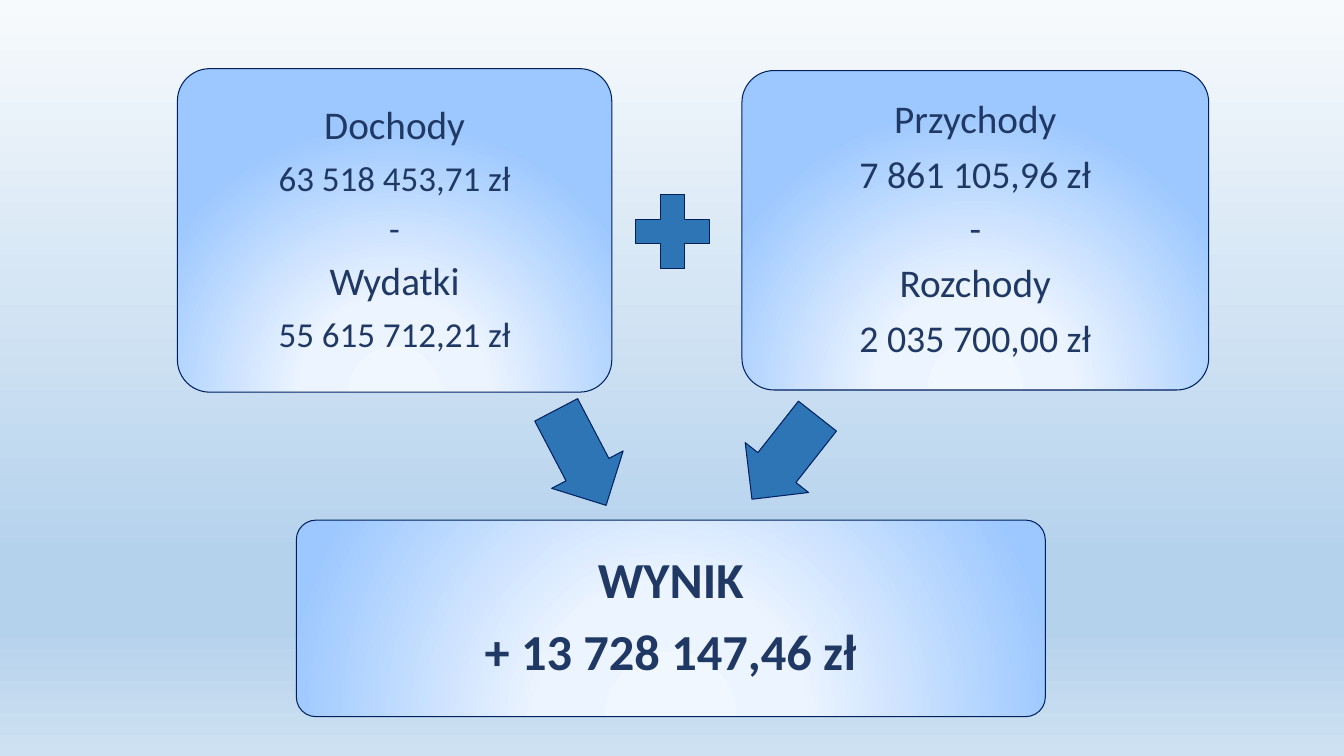
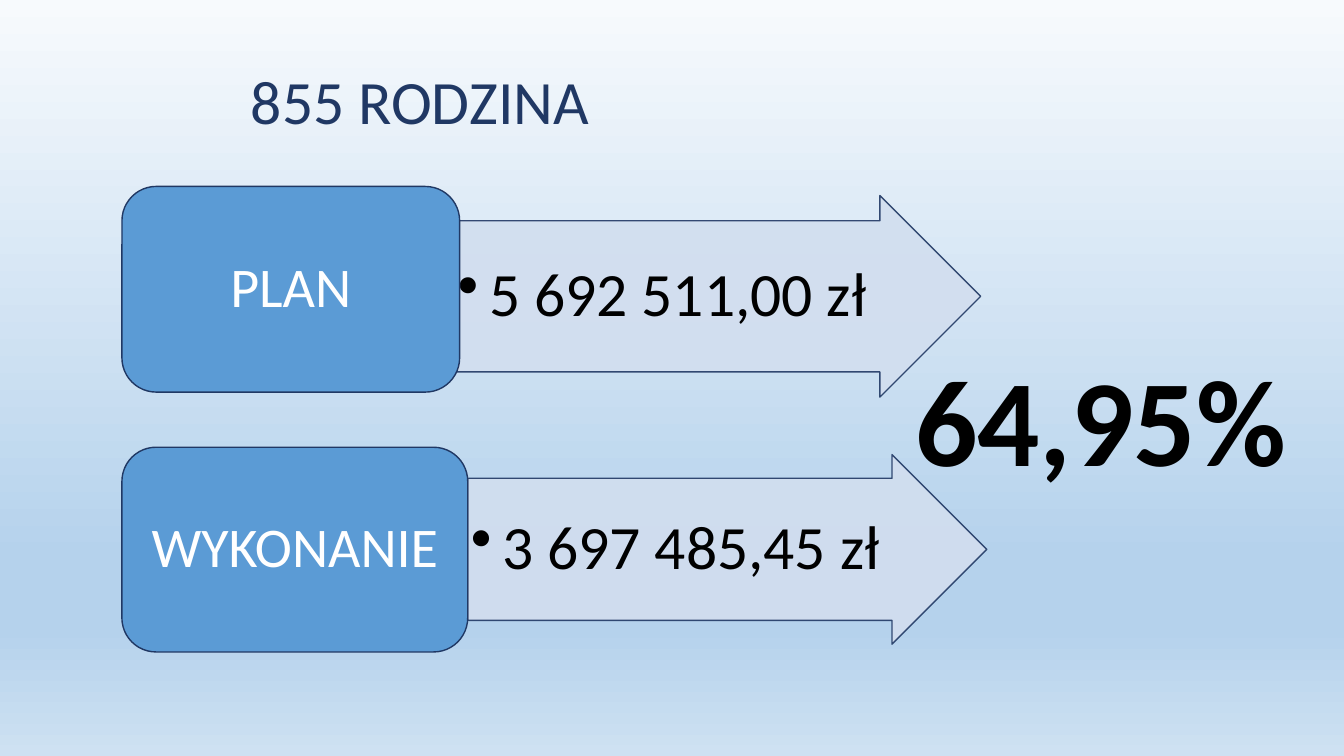
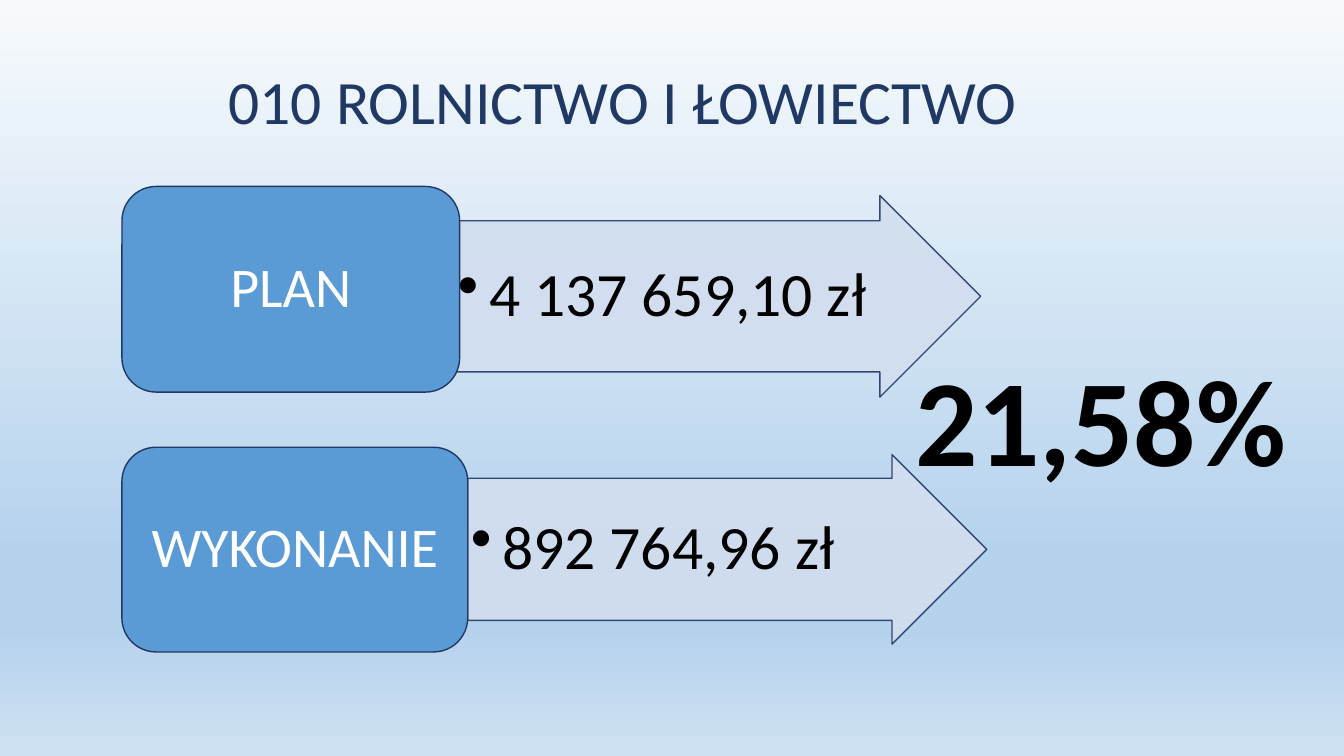
from dataclasses import dataclass

from lxml.etree import SubElement
from pptx import Presentation
from pptx.dml.color import RGBColor
from pptx.enum.shapes import MSO_SHAPE
from pptx.enum.text import MSO_ANCHOR, PP_ALIGN
from pptx.oxml.ns import qn
from pptx.util import Pt


@dataclass(frozen=True)
class Theme:
    font: str = "Calibri"
    navy: str = "203864"
    outline: str = "002060"
    accent: str = "2E75B6"
    label_fill: str = "5B9BD5"
    arrow_fill: str = "D2DEEF"
    white: str = "FFFFFF"
    black: str = "000000"
    sky: tuple = ((0, "F7FAFD"), (74, "B5D2EC"), (83, "B5D2EC"), (100, "CEE1F2"))
    glow: tuple = ((0, "F1F7FF"), (34, "ECF4FF"), (100, "9DC8FF"))
    heading: int = 28
    result: int = 36
    label: int = 40
    title: int = 44
    percent: int = 88


theme = Theme()


def set_gradient(fill, element, stops):
    """Give the fill these stops and return its gradient element."""
    fill.gradient()
    gradient = next(element.iter(qn("a:gradFill")))
    stop_list = gradient.find(qn("a:gsLst"))
    for stop in list(stop_list):
        stop_list.remove(stop)
    for position, color in stops:
        stop = SubElement(stop_list, qn("a:gs"), pos=str(position * 1000))
        SubElement(stop, qn("a:srgbClr"), val=color)
    return gradient


def place(slide, kind, frame, lines=(), color=theme.navy, bold=False, fill=None,
          line=theme.outline, weight=0.75, centered=True, spacing=0.9, after=0.35):
    """Add a shape, or a text box if kind is None; lines holds (text, size) pairs."""
    frame = [Pt(length) for length in frame]
    if kind is None:
        box = slide.shapes.add_textbox(*frame)
    else:
        box = slide.shapes.add_shape(kind, *frame)
        box.shadow.inherit = False
        box.line.color.rgb = RGBColor.from_string(line)
        box.line.width = Pt(weight)
        if fill:
            box.fill.solid()
            box.fill.fore_color.rgb = RGBColor.from_string(fill)
    text_frame = box.text_frame
    text_frame.word_wrap = True
    text_frame.vertical_anchor = MSO_ANCHOR.MIDDLE
    text_frame.text = "\n".join(text for text, size in lines)
    for para, (text, size) in zip(text_frame.paragraphs, lines):
        para.alignment = PP_ALIGN.CENTER if centered else PP_ALIGN.LEFT
        para.line_spacing = spacing
        para.space_after = Pt(size * after)
        for span in para.runs:
            span.font.name = theme.font
            span.font.size = Pt(size)
            span.font.bold = bold
            span.font.color.rgb = RGBColor.from_string(color)
    return box


deck = Presentation()
deck.slide_width, deck.slide_height = Pt(960), Pt(540)
blank = deck.slide_layouts[6]
master = deck.slide_master
sky = set_gradient(master.background.fill, master.element, theme.sky)
sky.find(qn("a:lin")).set("ang", "5400000")

# Budget result
slide = deck.slides.add_slide(blank)
income = [("Dochody", theme.heading), ("63 518 453,71 zł", 25), ("-", 25),
          ("Wydatki", theme.heading), ("55 615 712,21 zł", 25)]
financing = [("Przychody", theme.heading), ("7 861 105,96 zł", 27), ("-", 27),
             ("Rozchody", theme.heading), ("2 035 700,00 zł", 27)]
result = [("WYNIK", theme.result), ("+ 13 728 147,46 zł", theme.result)]
for frame, lines, bold in [
    ((126.7, 49, 310.3, 231.1), income, False),
    ((530, 50.4, 333.4, 228.2), financing, False),
    ((211.7, 371.5, 535, 140.4), result, True),
]:
    card = place(slide, MSO_SHAPE.ROUNDED_RECTANGLE, frame, lines, bold=bold)
    card.adjustments[0] = 0.1
    glow = set_gradient(card.fill, card.element, theme.glow)
    glow.remove(glow.find(qn("a:lin")))
    circle = SubElement(glow, qn("a:path"), {"path": "circle"})
    SubElement(circle, qn("a:fillToRect"), l="50000", t="155000", r="50000", b="-55000")

for frame, rotation in [((376.6, 298.1, 77, 57.6), 62.4), ((522.7, 298.1, 75.6, 57.6), 128.2)]:
    arrow = place(slide, MSO_SHAPE.RIGHT_ARROW, frame, fill=theme.accent)
    arrow.adjustments[0] = 0.6
    arrow.rotation = rotation
place(slide, MSO_SHAPE.MATH_PLUS, (444.2, 129.6, 72, 72), fill=theme.accent)

# Plan and execution by budget section
rows = [
    ("PLAN", (87.1, 133.2, 241.2, 146.9), (324.7, 139.7, 375.8, 144)),
    ("WYKONANIE", (87.1, 319.5, 247, 146.2), (334.1, 324.7, 370.8, 135.4)),
]
for title, title_left, amounts, percent in [
    ("855 RODZINA", 172.1, ("5 692 511,00 zł", "3 697 485,45 zł"), "64,95%"),
    ("010 ROLNICTWO I ŁOWIECTWO", 156.2, ("4 137 659,10 zł", "892 764,96 zł"), "21,58%"),
]:
    slide = deck.slides.add_slide(blank)
    place(slide, None, (title_left, 19.4, 760, 104.4), [(title, theme.title)],
          centered=False, spacing=1, after=0)
    for (label, label_frame, arrow_frame), amount in zip(rows, amounts):
        arrow = place(slide, MSO_SHAPE.RIGHT_ARROW, arrow_frame, [(amount, theme.title)],
                      color=theme.black, fill=theme.arrow_fill, line=theme.navy, weight=1,
                      centered=False, after=0.15)
        arrow.adjustments[0] = 0.75
        arrow.text_frame.margin_left = arrow.text_frame.margin_right = Pt(2.2)
        for color in arrow.element.spPr.iter(qn("a:srgbClr")):
            SubElement(color, qn("a:alpha"), val="90000")
        properties = arrow.text_frame.paragraphs[0]._p.get_or_add_pPr()
        properties.set("marL", str(Pt(22.5)))
        properties.set("indent", str(-Pt(22.5)))
        SubElement(properties, qn("a:buChar"), char="•")
        tile = place(slide, MSO_SHAPE.ROUNDED_RECTANGLE, label_frame, [(label, theme.label)],
                     color=theme.white, fill=theme.label_fill, line=theme.navy, weight=1)
        tile.text_frame.margin_left = tile.text_frame.margin_right = Pt(12)
    place(slide, None, (646.6, 241.2, 293.8, 113.8), [(percent, theme.percent)],
          color=theme.black, bold=True, centered=False, spacing=1, after=0)

deck.save("out.pptx")
